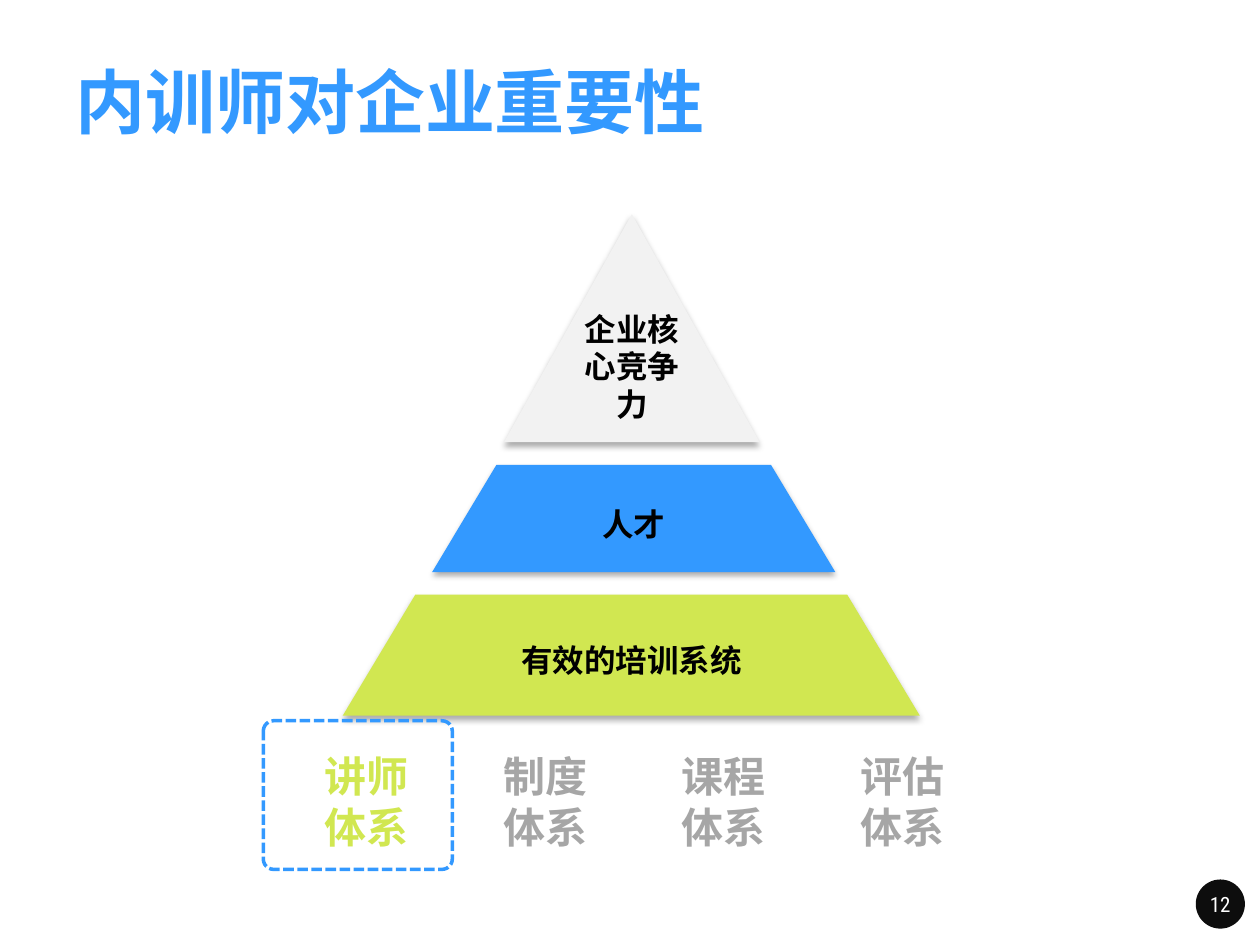
from dataclasses import dataclass

from lxml import etree
from pptx import Presentation
from pptx import util as u
from pptx.dml.color import RGBColor
from pptx.enum import dml, shapes, text
from pptx.oxml.ns import qn

CJK = "Noto Sans CJK SC"
LATIN = "Roboto Condensed"
BLUE, LIME, PALE, GREY = "3399FF", "D1E751", "F2F2F2", "A6A6A6"
BLACK, WHITE, BADGE = "000000", "FFFFFF", "0D0D0D"
CENTER = text.PP_ALIGN.CENTER
SHAPE = shapes.MSO_SHAPE


@dataclass
class Tier:
    label: str
    kind: SHAPE
    left: float
    top: float
    width: float
    height: float
    fill: str
    bottom_inset: float = 0.05


@dataclass
class Pillar:
    name: str
    color: str


TIERS = [
    Tier("企业核心竞争力", SHAPE.FLOWCHART_EXTRACT, 4, 1.7, 2.03, 1.81, PALE, 0.35),
    Tier("人才", SHAPE.TRAPEZOID, 3.43, 3.69, 3.2, 0.85, BLUE),
    Tier("有效的培训系统", SHAPE.TRAPEZOID, 2.72, 4.72, 4.58, 0.96, LIME),
]
PILLARS = [
    Pillar("讲师", LIME),
    Pillar("制度", GREY),
    Pillar("课程", GREY),
    Pillar("评估", GREY),
]
PILLAR_LEFT, PILLAR_STEP = 2.48, 1.417


def rgb(color: str) -> RGBColor:
    return RGBColor.from_string(color)


def write(box, *lines: str, size: float, color: str, font: str = CJK,
          bold: bool = True, align=None, anchor=text.MSO_ANCHOR.MIDDLE) -> None:
    """Fill a box with one paragraph per line, all in the same format."""
    frame = box.text_frame
    frame.word_wrap = True
    frame.vertical_anchor = anchor
    for index, line in enumerate(lines):
        para = frame.add_paragraph() if index else frame.paragraphs[0]
        para.alignment = align
        span = para.add_run()
        span.text = line
        span.font.size = u.Pt(size)
        span.font.bold = bold
        span.font.name = font
        span.font.color.rgb = rgb(color)
        east_asian = etree.SubElement(span.font._element, qn("a:ea"))
        east_asian.set("typeface", font)


def add_box(page, left: float, top: float, width: float, height: float):
    return page.shapes.add_textbox(
        u.Inches(left), u.Inches(top), u.Inches(width), u.Inches(height))


def add_shape(page, kind, left: float, top: float, width: float, height: float,
              fill: str | None = None):
    shape = page.shapes.add_shape(
        kind, u.Inches(left), u.Inches(top), u.Inches(width), u.Inches(height))
    shape.shadow.inherit = False
    shape.line.fill.background()
    if fill:
        shape.fill.solid()
        shape.fill.fore_color.rgb = rgb(fill)
    else:
        shape.fill.background()
    return shape


def add_drop_shadow(shape) -> None:
    effects = shape._element.spPr.find(qn("a:effectLst"))
    shadow = etree.SubElement(
        effects, qn("a:outerShdw"), blurRad=str(u.Pt(3.5)), dist=str(u.Pt(2.2)),
        dir="5400000", algn="ctr", rotWithShape="0")
    color = etree.SubElement(shadow, qn("a:srgbClr"), val=BLACK)
    etree.SubElement(color, qn("a:alpha"), val="32000")


def add_tier(page, tier: Tier) -> None:
    shape = add_shape(page, tier.kind, tier.left, tier.top, tier.width,
                      tier.height, tier.fill)
    if tier.kind == SHAPE.TRAPEZOID:
        shape.adjustments[0] = 0.6
    add_drop_shadow(shape)
    shape.text_frame.margin_bottom = u.Inches(tier.bottom_inset)
    write(shape, tier.label, size=18, color=BLACK, align=CENTER)


def add_pillar(page, pillar: Pillar, column: int) -> None:
    box = add_box(page, PILLAR_LEFT + column * PILLAR_STEP, 5.91, 1.42, 0.91)
    write(box, pillar.name, "体系", size=24, color=pillar.color,
          anchor=text.MSO_ANCHOR.TOP)


def add_page_number(page, number: int) -> None:
    badge = add_shape(page, SHAPE.OVAL, 9.49, 6.98, 0.39, 0.39, BADGE)
    frame = badge.text_frame
    frame.margin_left = frame.margin_right = u.Inches(0.04)
    frame.margin_top = frame.margin_bottom = u.Inches(0.04)
    write(badge, str(number), size=12, color=WHITE, font=LATIN, bold=False,
          align=CENTER)


def main() -> None:
    deck = Presentation()
    deck.slide_width, deck.slide_height = u.Inches(10), u.Inches(7.5)
    page = deck.slides.add_slide(deck.slide_layouts[6])

    # Page number and title
    add_page_number(page, 12)
    write(add_box(page, 0.5, 0.36, 8.99, 0.87), "内训师对企业重要性",
          size=40, color=BLUE)

    # Pyramid
    for tier in TIERS:
        add_tier(page, tier)

    # Systems under the pyramid
    for column, pillar in enumerate(PILLARS):
        add_pillar(page, pillar, column)

    # Dashed frame around the trainer system
    outline = add_shape(page, SHAPE.ROUNDED_RECTANGLE, 2.09, 5.72, 1.5, 1.18)
    outline.adjustments[0] = 0.07
    outline.line.color.rgb = rgb(BLUE)
    outline.line.width = u.Pt(2)
    outline.line.dash_style = dml.MSO_LINE.SQUARE_DOT

    deck.save("out.pptx")


if __name__ == "__main__":
    main()
